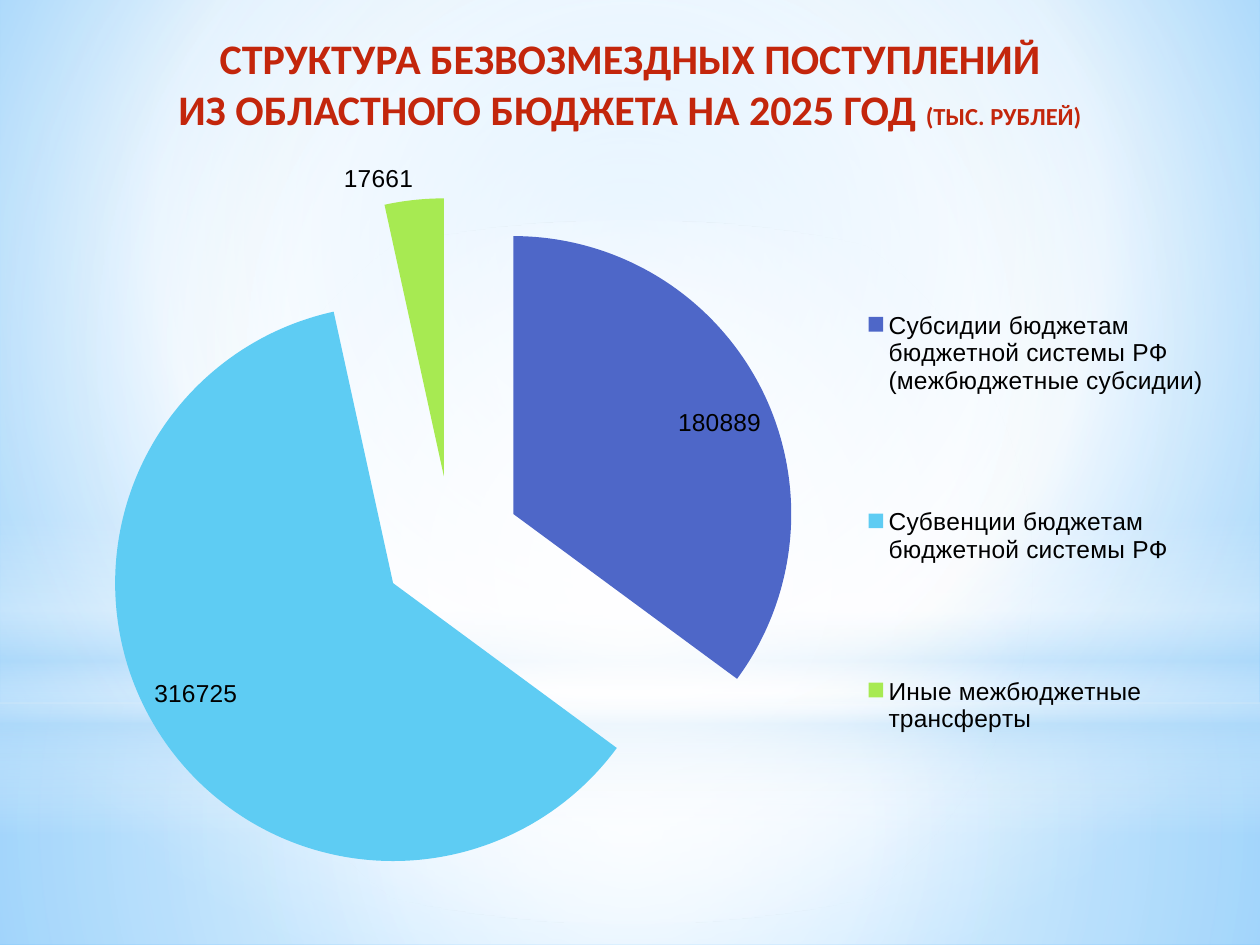
from dataclasses import dataclass
from typing import NamedTuple

from lxml import etree
from pptx import Presentation
from pptx import util as u
from pptx.chart.data import CategoryChartData
from pptx.dml.color import RGBColor
from pptx.enum import chart as charts, shapes, text
from pptx.oxml import ns


@dataclass(frozen=True)
class Theme:
    title_font: str = "Calibri"
    chart_font: str = "Arial"
    title_size: int = 24
    unit_size: int = 14
    chart_size: int = 14
    title_color: str = "C3260C"
    chart_color: str = "000000"
    white: str = "FFFFFF"
    haze: str = "B4DCFA"
    sky: str = "9ED5FF"
    deep_sky: str = "5BB9FF"


class Box(NamedTuple):
    left: float
    top: float
    width: float
    height: float


class Stop(NamedTuple):
    position: int
    color: str
    opacity: int = 100


class Gradient(NamedTuple):
    stops: list[Stop]
    focus: tuple[int, int, int, int] | None = (50, 50, 50, 50)


class Layer(NamedTuple):
    kind: shapes.MSO_SHAPE
    box: Box
    gradient: Gradient


class Share(NamedTuple):
    name: str
    value: int
    color: str


THEME = Theme()
WIDTH, HEIGHT = u.Inches(10), u.Inches(7.5)
HORIZON = 0.744
TITLE_BOX = Box(0.012, 0.028, 0.976, 0.121)
CHART_BOX = Box(0.035, 0.153, 0.937, 0.808)
PIE_BOX = Box(0.05, 0.07, 0.59, 0.91)
LEGEND_BOX = Box(0.69, 0.07, 0.3, 0.85)
EXPLOSION = 25

BACKDROP = Gradient(
    [Stop(0, THEME.sky), Stop(60, THEME.white), Stop(100, THEME.deep_sky)],
    (20, 10, 20, 60),
)
LAYERS = [
    Layer(shapes.MSO_SHAPE.RECTANGLE, Box(0, HORIZON, 1, 1 - HORIZON), Gradient(
        [Stop(0, THEME.white, 91), Stop(37, THEME.white, 76), Stop(100, THEME.haze, 79)])),
    Layer(shapes.MSO_SHAPE.RECTANGLE, Box(0, 0, 1, HORIZON), Gradient(
        [Stop(0, THEME.white, 89), Stop(48, THEME.white, 62), Stop(100, THEME.haze, 79)])),
    Layer(shapes.MSO_SHAPE.RECTANGLE, Box(0, 0.549, 1, 0.333), Gradient(
        [Stop(0, THEME.white, 0), Stop(29, THEME.white, 30), Stop(45, THEME.haze, 40),
         Stop(55, THEME.white, 26), Stop(65, THEME.haze, 60), Stop(100, THEME.white, 0)],
        None)),
    Layer(shapes.MSO_SHAPE.OVAL, Box(0, 0.233, 1, HORIZON), Gradient(
        [Stop(0, THEME.white), Stop(56, THEME.white, 0)])),
]
SHARES = [
    Share("Субсидии бюджетам бюджетной системы РФ (межбюджетные субсидии)", 180889, "4E67C8"),
    Share("Субвенции бюджетам бюджетной системы РФ", 316725, "5ECCF3"),
    Share("Иные межбюджетные трансферты", 17661, "A7EA52"),
]


def place(box: Box) -> tuple[int, int, int, int]:
    return (round(box.left * WIDTH), round(box.top * HEIGHT),
            round(box.width * WIDTH), round(box.height * HEIGHT))


def add_child(parent, tag: str, **attributes):
    values = {name: str(value) for name, value in attributes.items()}
    return etree.SubElement(parent, ns.qn(tag), values)


def paint(owner, fill, gradient: Gradient) -> None:
    fill.gradient()
    element = owner.element.find(".//" + ns.qn("a:gradFill"))
    for child in list(element):
        element.remove(child)
    stop_list = add_child(element, "a:gsLst")
    for stop in gradient.stops:
        color = add_child(add_child(stop_list, "a:gs", pos=stop.position * 1000),
                          "a:srgbClr", val=stop.color)
        if stop.opacity < 100:
            add_child(color, "a:alpha", val=stop.opacity * 1000)
    if gradient.focus is None:
        add_child(element, "a:lin", ang=90 * 60000, scaled=0)
    else:
        sides = {side: share * 1000 for side, share in zip("ltrb", gradient.focus)}
        add_child(add_child(element, "a:path", path="circle"), "a:fillToRect", **sides)


def add_layer(slide, layer: Layer) -> None:
    shape = slide.shapes.add_shape(layer.kind, *place(layer.box))
    shape.shadow.inherit = False
    shape.line.fill.background()
    paint(shape, shape.fill, layer.gradient)


def format_title(slide) -> None:
    title = slide.shapes.title
    slide.shapes.element.append(title.element)
    title.left, title.top, title.width, title.height = place(TITLE_BOX)
    frame = title.text_frame
    frame.text = "СТРУКТУРА БЕЗВОЗМЕЗДНЫХ ПОСТУПЛЕНИЙ\nИЗ ОБЛАСТНОГО БЮДЖЕТА НА 2025 ГОД "
    frame.word_wrap = True
    frame.auto_size = text.MSO_AUTO_SIZE.SHAPE_TO_FIT_TEXT
    frame.vertical_anchor = text.MSO_ANCHOR.TOP
    for paragraph in frame.paragraphs:
        paragraph.alignment = text.PP_ALIGN.CENTER
        paragraph.space_before = u.Pt(0)
        paragraph.font.name = THEME.title_font
        paragraph.font.size = u.Pt(THEME.title_size)
        paragraph.font.bold = True
        paragraph.font.color.rgb = RGBColor.from_string(THEME.title_color)
    unit = frame.paragraphs[-1].add_run()
    unit.text = "(ТЫС. РУБЛЕЙ)"
    unit.font.size = u.Pt(THEME.unit_size)


def build_layout(box: Box, inner: bool = False):
    layout = etree.Element(ns.qn("c:layout"))
    manual = add_child(layout, "c:manualLayout")
    if inner:
        add_child(manual, "c:layoutTarget", val="inner")
    for axis in "xy":
        add_child(manual, f"c:{axis}Mode", val="edge")
    for name, value in zip("xywh", box):
        add_child(manual, f"c:{name}", val=value)
    return layout


def add_pie(slide) -> None:
    data = CategoryChartData(number_format="General")
    data.categories = [share.name for share in SHARES]
    data.add_series("Series 1", [share.value for share in SHARES])
    chart = slide.shapes.add_chart(charts.XL_CHART_TYPE.PIE, *place(CHART_BOX), data).chart
    chart.has_title = False
    chart.font.name = THEME.chart_font
    chart.font.size = u.Pt(THEME.chart_size)
    chart.font.color.rgb = RGBColor.from_string(THEME.chart_color)

    plot = chart.plots[0]
    plot.vary_by_categories = True
    series = plot.series[0]
    series.format.line.fill.background()
    for index, share in enumerate(SHARES):
        fill = series.points[index].format.fill
        fill.solid()
        fill.fore_color.rgb = RGBColor.from_string(share.color)

    labels = series.data_labels
    labels.show_value = True
    labels.position = charts.XL_LABEL_POSITION.BEST_FIT
    labels.font.size = u.Pt(THEME.chart_size)

    chart.has_legend = True
    chart.legend.position = charts.XL_LEGEND_POSITION.RIGHT
    chart.legend.include_in_layout = False
    chart.legend.font.size = u.Pt(THEME.chart_size)

    plot_area = chart.plots[0]._element.getparent()
    legend = plot_area.getparent().find(ns.qn("c:legend"))
    series_format = plot_area.find(".//" + ns.qn("c:ser") + "/" + ns.qn("c:spPr"))
    series_format.addnext(etree.Element(ns.qn("c:explosion"), val=str(EXPLOSION)))
    for parent in (plot_area, legend):
        for layout in parent.findall(ns.qn("c:layout")):
            parent.remove(layout)
    plot_area.insert(0, build_layout(PIE_BOX, inner=True))
    legend.find(ns.qn("c:legendPos")).addnext(build_layout(LEGEND_BOX))


def main() -> None:
    presentation = Presentation()
    presentation.slide_width, presentation.slide_height = WIDTH, HEIGHT
    slide = presentation.slides.add_slide(presentation.slide_layouts[5])
    paint(slide, slide.background.fill, BACKDROP)
    for layer in LAYERS:
        add_layer(slide, layer)
    format_title(slide)
    add_pie(slide)
    presentation.save("out.pptx")


if __name__ == "__main__":
    main()
